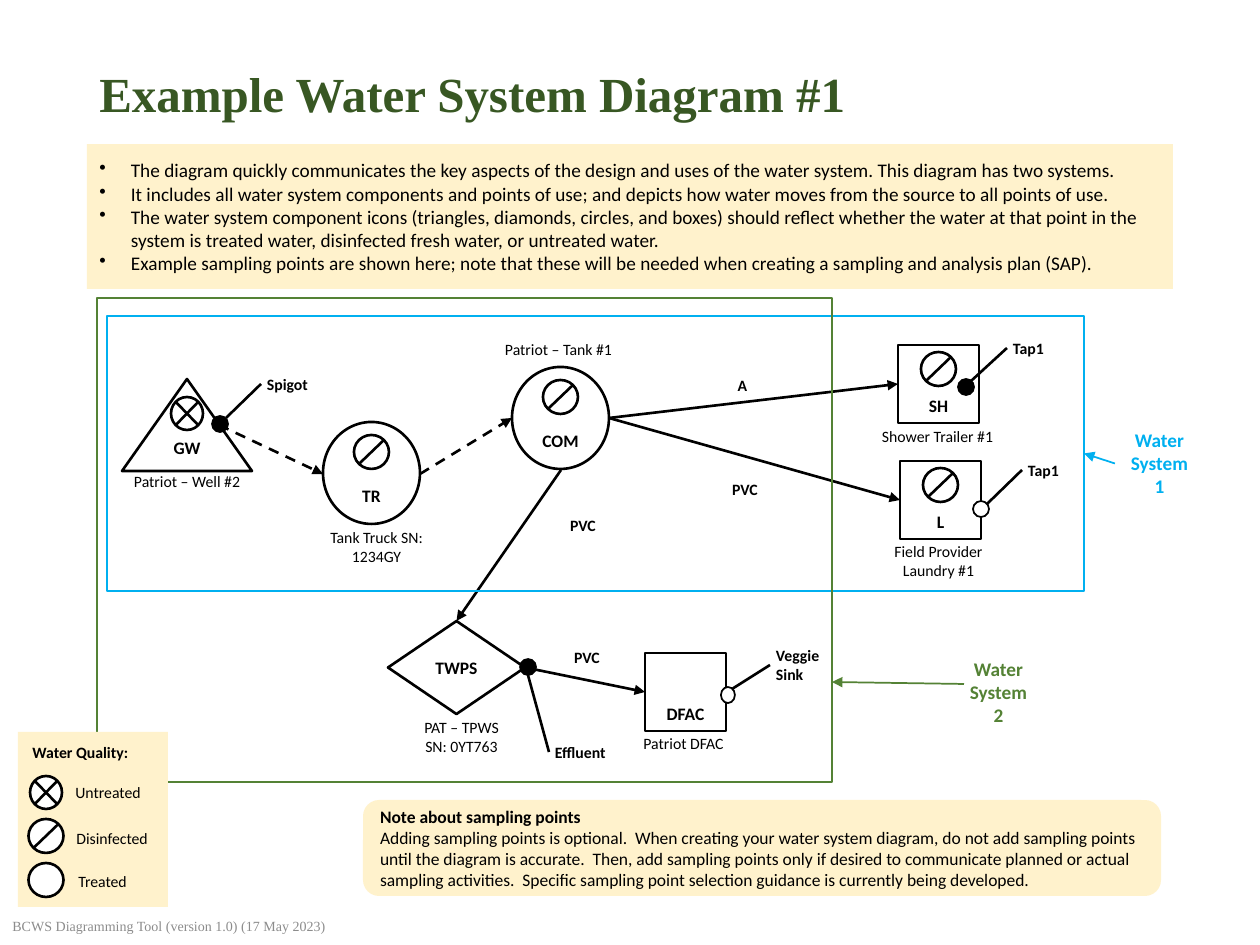
from dataclasses import dataclass

from lxml.etree import SubElement
from pptx import Presentation
from pptx.dml.color import RGBColor
from pptx.enum.dml import MSO_LINE
from pptx.enum.shapes import MSO_CONNECTOR, MSO_SHAPE
from pptx.enum.text import MSO_ANCHOR, PP_ALIGN
from pptx.oxml.ns import qn
from pptx.util import Emu, Pt

TOP, LEFT, BOTTOM, RIGHT = range(4)


@dataclass(frozen=True)
class Theme:
    body_font: str = "Calibri"
    title_font: str = "Times New Roman"
    ink: str = "000000"
    paper: str = "FFFFFF"
    panel: str = "FFF2CC"
    title: str = "385723"
    footer: str = "8C8C8C"
    system_1: str = "00B0F0"
    system_2: str = "548235"
    title_size: int = 28
    text_size: int = 11
    label_size: int = 10
    caption_size: int = 9
    footer_size: int = 8
    line: float = 1.5
    thin_line: float = 1


THEME = Theme()


def px(value):
    return Emu(round(value * 914400 / 126))


def inside(box, left, top, width, height):
    return box[0] + left, box[1] + top, width, height


def color(value):
    return RGBColor.from_string(value)


def write(shape, lines, size=THEME.caption_size, font=THEME.body_font, ink=THEME.ink,
          bold=False, align=PP_ALIGN.LEFT, anchor=MSO_ANCHOR.MIDDLE, wrap=True):
    frame = shape.text_frame
    frame.word_wrap = wrap
    frame.vertical_anchor = anchor
    frame.text = "\n".join(lines)
    for paragraph in frame.paragraphs:
        paragraph.alignment = align
        paragraph.font.size = Pt(size)
        paragraph.font.name = font
        paragraph.font.bold = bold
        paragraph.font.color.rgb = color(ink)
    return frame


def add_text(slide, box, lines, **style):
    shape = slide.shapes.add_textbox(*map(px, box))
    write(shape, lines, **style)
    return shape


def add_outline(slide, kind, box, fill=THEME.paper, line=THEME.ink, weight=THEME.line):
    shape = slide.shapes.add_shape(kind, *map(px, box))
    shape.shadow.inherit = False
    if fill:
        shape.fill.solid()
        shape.fill.fore_color.rgb = color(fill)
    else:
        shape.fill.background()
    if line:
        shape.line.color.rgb = color(line)
        shape.line.width = Pt(weight)
    else:
        shape.line.fill.background()
    return shape


def add_line(slide, start, end, ink=THEME.ink, weight=THEME.line, arrow=False, dashed=False):
    """Each end is a point in px or a (shape, side) pair to join."""
    joins = [isinstance(stop[0], (int, float)) for stop in (start, end)]
    points = [stop if free else (0, 0) for stop, free in zip((start, end), joins)]
    line = slide.shapes.add_connector(MSO_CONNECTOR.STRAIGHT, *map(px, points[0] + points[1]))
    if not joins[0]:
        line.begin_connect(*start)
    if not joins[1]:
        line.end_connect(*end)
    line.line.color.rgb = color(ink)
    line.line.width = Pt(weight)
    if dashed:
        line.line.dash_style = MSO_LINE.DASH
    if arrow:
        SubElement(line.line._get_or_add_ln(), qn("a:tailEnd"), type="triangle")
    SubElement(line._element.spPr, qn("a:effectLst"))


def add_quality_icon(slide, center, top, quality):
    if quality == "Untreated":
        add_outline(slide, MSO_SHAPE.FLOWCHART_SUMMING_JUNCTION, (center - 16, top, 32, 33))
        return
    left = center - 17.5
    add_outline(slide, MSO_SHAPE.FLOWCHART_CONNECTOR, (left, top, 35, 34))
    if quality == "Disinfected":
        add_line(slide, (left + 5, top + 29), (left + 30, top + 5))


def add_component(slide, box, kind, label, caption, caption_box, quality=None):
    shape = add_outline(slide, kind, box)
    frame = write(shape, [label], size=THEME.label_size, bold=True, align=PP_ALIGN.CENTER)
    if kind in (MSO_SHAPE.RECTANGLE, MSO_SHAPE.FLOWCHART_CONNECTOR):
        frame.vertical_anchor = MSO_ANCHOR.BOTTOM
        frame.margin_left = frame.margin_right = 0
        frame.margin_bottom = px(7 if kind == MSO_SHAPE.RECTANGLE else 3)
    if quality:
        icon_top = {MSO_SHAPE.ISOSCELES_TRIANGLE: 18, MSO_SHAPE.FLOWCHART_CONNECTOR: 13}.get(kind, 7)
        add_quality_icon(slide, box[0] + box[2] / 2, box[1] + icon_top, quality)
    add_text(slide, caption_box, caption, align=PP_ALIGN.CENTER, wrap=False)
    return shape


def add_sampling_point(slide, box, label, dot, fill, start, end, size=(139, 32)):
    dot_width = 14 if label == "Veggie Sink" else 16
    add_outline(slide, MSO_SHAPE.FLOWCHART_CONNECTOR, inside(box, *dot, dot_width, 16),
                fill=fill, weight=THEME.thin_line)
    start, end = (inside(box, *point, 0, 0)[:2] for point in (start, end))
    add_line(slide, start, end)
    text = add_text(slide, (start[0], start[1] - size[1] // 2, *size), [label], bold=True)
    text.text_frame.margin_left = px(6)


def build_diagram(slide, box):
    def at(*values):
        return inside(box, *values)

    def point(left, top):
        return box[0] + left, box[1] + top

    # Components: box, shape, label, caption, caption box, water quality
    circle, square = MSO_SHAPE.FLOWCHART_CONNECTOR, MSO_SHAPE.RECTANGLE
    components = [
        ((25, 81, 130, 92), MSO_SHAPE.ISOSCELES_TRIANGLE, "GW", ["Patriot – Well #2"],
         (23, 167, 134, 32), "Untreated"),
        ((226, 124, 97, 102), circle, "TR", ["Tank Truck SN:", "1234GY"],
         (219, 224, 121, 50), "Disinfected"),
        ((415, 69, 97, 102), circle, "COM", ["Patriot – Tank #1"], (393, 35, 137, 32), "Disinfected"),
        ((801, 47, 81, 78), square, "SH", ["Shower Trailer #1"], (771, 122, 139, 32), "Disinfected"),
        ((803, 163, 81, 78), square, "L", ["Field Provider", "Laundry #1"],
         (780, 238, 123, 50), "Disinfected"),
        ((291, 323, 137, 93), MSO_SHAPE.DIAMOND, "TWPS", ["PAT – TPWS", "SN: 0YT763"],
         (311, 414, 107, 50), None),
        ((548, 355, 81, 78), square, "DFAC", ["Patriot DFAC"], (533, 429, 107, 32), None),
    ]
    nodes = {label: add_component(slide, at(*place), kind, label, caption, at(*caption_place), quality)
             for place, kind, label, caption, caption_place, quality in components}

    # Pipes and truck routes
    add_line(slide, point(122, 127), point(226, 176), arrow=True, dashed=True)
    add_line(slide, point(323, 176), point(415, 120), arrow=True, dashed=True)
    for start, end in [(point(512, 120), (nodes["SH"], LEFT)),
                       (point(512, 120), (nodes["L"], LEFT)),
                       (point(464, 172), (nodes["TWPS"], TOP)),
                       ((nodes["TWPS"], RIGHT), (nodes["DFAC"], LEFT))]:
        add_line(slide, start, end, arrow=True)
    for label, left, top, width in [("A", 628, 71, 35), ("PVC", 622, 175, 52),
                                    ("PVC", 460, 211, 52), ("PVC", 464, 343, 52)]:
        add_text(slide, at(left, top, width, 32), [label], bold=True,
                 align=PP_ALIGN.CENTER, wrap=False)

    # Sampling points
    add_sampling_point(slide, box, "Spigot", (115, 118), THEME.ink, (164, 86), (129, 120))
    add_sampling_point(slide, box, "Tap1", (861, 81), THEME.ink, (910, 50), (873, 84))
    add_sampling_point(slide, box, "Tap1", (876, 203), THEME.paper, (925, 172), (890, 206))
    add_sampling_point(slide, box, "Veggie Sink", (624, 389), THEME.paper, (673, 367), (635, 391), (66, 50))
    add_sampling_point(slide, box, "Effluent", (423, 361), THEME.ink, (452, 454), (431, 377), (87, 32))

    # System boundaries and their callouts
    systems = [("Water System 1", THEME.system_1, (10, 18, 977, 275), (1018, 124, 89, 83)),
               ("Water System 2", THEME.system_2, (0, 0, 735, 484), (857, 353, 89, 83))]
    for label, ink, boundary_place, callout_place in systems:
        boundary = add_outline(slide, square, at(*boundary_place), fill=None, line=ink)
        callout = add_text(slide, at(*callout_place), [label], size=THEME.text_size, ink=ink,
                           bold=True, align=PP_ALIGN.CENTER, anchor=MSO_ANCHOR.TOP)
        if ink == THEME.system_1:
            start, end = (callout, LEFT), (boundary, RIGHT)
        else:
            start, end = point(867, 386), point(735, 384)
        add_line(slide, start, end, ink=ink, weight=THEME.thin_line, arrow=True)


def build_heading(slide, box):
    title = add_text(slide, box, ["Example Water System Diagram #1"], size=THEME.title_size,
                     font=THEME.title_font, ink=THEME.title, bold=True)
    title.text_frame.paragraphs[0].line_spacing = 0.9


def build_summary(slide, box):
    panel = add_outline(slide, MSO_SHAPE.RECTANGLE, box, fill=THEME.panel, line=None)
    frame = write(panel, [
        "The diagram quickly communicates the key aspects of the design and uses of the water system. This diagram has two systems.",
        "It includes all water system components and points of use; and depicts how water moves from the source to all points of use.",
        "The water system component icons (triangles, diamonds, circles, and boxes) should reflect whether the water at that point in the system is treated water, disinfected fresh water, or untreated water.",
        "Example sampling points are shown here; note that these will be needed when creating a sampling and analysis plan (SAP).",
    ], size=THEME.text_size)
    for paragraph in frame.paragraphs:
        properties = paragraph._p.get_or_add_pPr()
        properties.set("marL", "228600")
        properties.set("indent", "-228600")
        bullet = properties.makeelement(qn("a:buChar"), {"char": "•"})
        properties.insert_element_before(bullet, "a:tabLst", "a:defRPr", "a:extLst")


def build_note(slide, box):
    panel = add_outline(slide, MSO_SHAPE.ROUNDED_RECTANGLE, box, fill=THEME.panel, line=None)
    frame = write(panel, [
        "Note about sampling points",
        "Adding sampling points is optional.  When creating your water system diagram, do not add sampling points until the diagram is accurate.  Then, add sampling points only if desired to communicate planned or actual sampling activities.  Specific sampling point selection guidance is currently being developed.",
    ], size=THEME.label_size)
    frame.paragraphs[0].font.bold = True


def build_legend(slide, box):
    add_outline(slide, MSO_SHAPE.RECTANGLE, box, fill=THEME.panel, line=None)
    add_text(slide, inside(box, 2, 4, 147, 32), ["Water Quality:"], bold=True)
    for quality, icon_top, left, top in [("Untreated", 44, 45, 44), ("Disinfected", 87, 46, 90),
                                         ("Treated", 131, 48, 133)]:
        add_quality_icon(slide, box[0] + 28, box[1] + icon_top, quality)
        add_text(slide, inside(box, left, top, 102, 32), [quality])


def build_footer(slide, box):
    add_text(slide, box, ["BCWS Diagramming Tool (version 1.0) (17 May 2023)"],
             size=THEME.footer_size, font=THEME.title_font, ink=THEME.footer)


def main():
    presentation = Presentation()
    presentation.slide_width, presentation.slide_height = px(1260), px(945)
    slide = presentation.slides.add_slide(presentation.slide_layouts[6])
    build_heading(slide, (87, 50, 1086, 93))
    build_footer(slide, (0, 907, 756, 37))
    build_summary(slide, (87, 144, 1086, 145))
    build_diagram(slide, (97, 298, 988, 484))
    build_note(slide, (363, 800, 798, 96))
    build_legend(slide, (18, 732, 150, 175))
    presentation.save("out.pptx")


if __name__ == "__main__":
    main()
